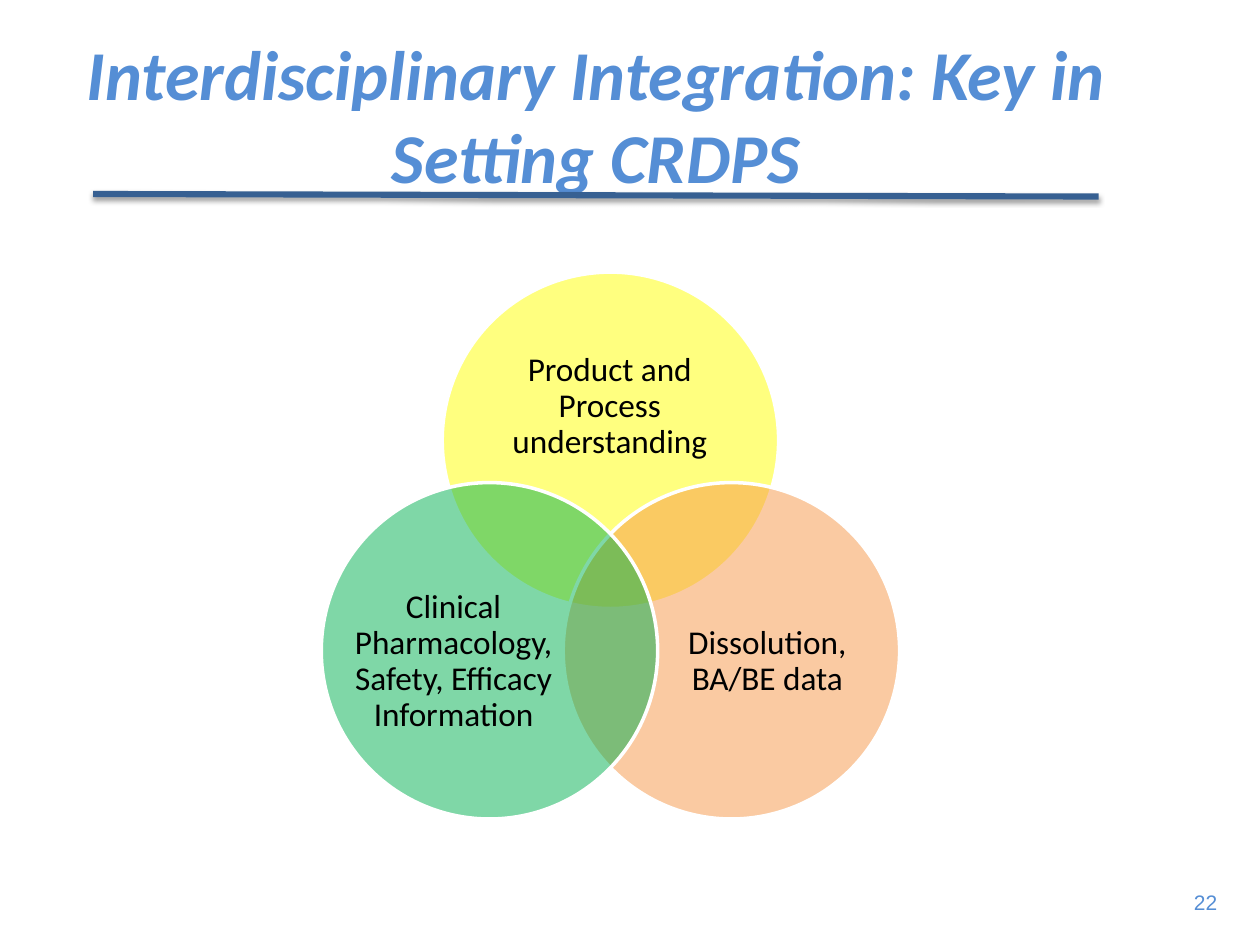
"""Build the interdisciplinary integration slide with its three-circle Venn diagram."""
import pptx
import pptx.util
import pptx.oxml
import pptx.oxml.ns
import pptx.dml.color
import pptx.enum.shapes
import pptx.enum.text

COLORS = {"title": "558ED5", "rule": "376092", "text": "000000", "outline": "FFFFFF",
          "product": "FFFF00", "dissolution": "F79646", "clinical": "00B050"}
COLORS = {name: pptx.dml.color.RGBColor.from_string(c) for name, c in COLORS.items()}
ALIGN = pptx.enum.text.PP_ALIGN
NS = pptx.oxml.ns.nsdecls("a")

prs = pptx.Presentation()
prs.slide_width = pptx.util.Inches(10)
prs.slide_height = pptx.util.Inches(7.5)
s = prs.slides.add_slide(prs.slide_layouts[6])


def share(x, y, w, h):
    """Turn percentages of the slide's size into lengths."""
    return [round(v * side / 100) for v, side in
            zip((x, y, w, h), (prs.slide_width, prs.slide_height) * 2)]


def add_text(box, text, size, color, font="Calibri", align=ALIGN.CENTER, inset=None):
    """Add a text box with one formatted paragraph and return its paragraph."""
    tf = s.shapes.add_textbox(*share(*box)).text_frame
    tf.word_wrap = True
    tf.vertical_anchor = pptx.enum.text.MSO_ANCHOR.MIDDLE
    if inset is not None:
        tf.margin_left = tf.margin_right = tf.margin_top = tf.margin_bottom = inset
    p = tf.paragraphs[0]
    p.text = text
    p.alignment = align
    f = p.runs[0].font
    f.name, f.size, f.color.rgb = font, pptx.util.Pt(size), COLORS[color]
    return p


p = add_text((93.5, 93.47, 4.1, 4), "22", 12, "title", "Arial", ALIGN.RIGHT)
p._parent.word_wrap = False

left, top, diameter, shift, drop = 35.1, 28.8, 26.7, 9.6, 22.27
circles = [
    ("product", 0, 0, "Product and Process understanding", (38.6, 35.07, 19.6, 16)),
    ("dissolution", 1, 1, "Dissolution, BA/BE data", (52.9, 60.27, 16, 19.6)),
    ("clinical", -1, 1, "Clinical Pharmacology, Safety, Efficacy Information",
     (28, 60.27, 16, 19.6)),
]
for name, col, row, text, box in circles:
    sp = s.shapes.add_shape(
        pptx.enum.shapes.MSO_SHAPE.OVAL,
        *share(left + col * shift, top + row * drop, diameter, diameter * 4 / 3))
    sp.shadow.inherit = False
    sp.fill.solid()
    sp.fill.fore_color.rgb = COLORS[name]
    clr = sp._element.spPr.find(pptx.oxml.ns.qn("a:solidFill"))[0]
    clr.append(pptx.oxml.parse_xml(f'<a:alpha {NS} val="50000"/>'))
    sp.line.color.rgb = COLORS["outline"]
    sp.line.width = pptx.util.Pt(2)
    p = add_text(box, text, 19, "text", inset=0)
    p.line_spacing = 0.9

p = add_text((2.3, 3.73, 90, 16.67), "Interdisciplinary Integration: Key in Setting CRDPS",
             40, "title")
p.runs[0].font.bold = p.runs[0].font.italic = True

rule = s.shapes.add_connector(pptx.enum.shapes.MSO_CONNECTOR.STRAIGHT,
                              *share(7.4, 20.53, 87.2, 20.8))
rule.line.color.rgb = COLORS["rule"]
rule.line.width = pptx.util.Pt(3.5)
rule._element.spPr.append(pptx.oxml.parse_xml(
    f'<a:effectLst {NS}><a:outerShdw blurRad="{pptx.util.Pt(3.1)}" '
    f'dist="{pptx.util.Pt(1.6)}" dir="5400000" rotWithShape="0">'
    '<a:srgbClr val="000000"><a:alpha val="38000"/></a:srgbClr>'
    '</a:outerShdw></a:effectLst>'))

prs.save("out.pptx")
